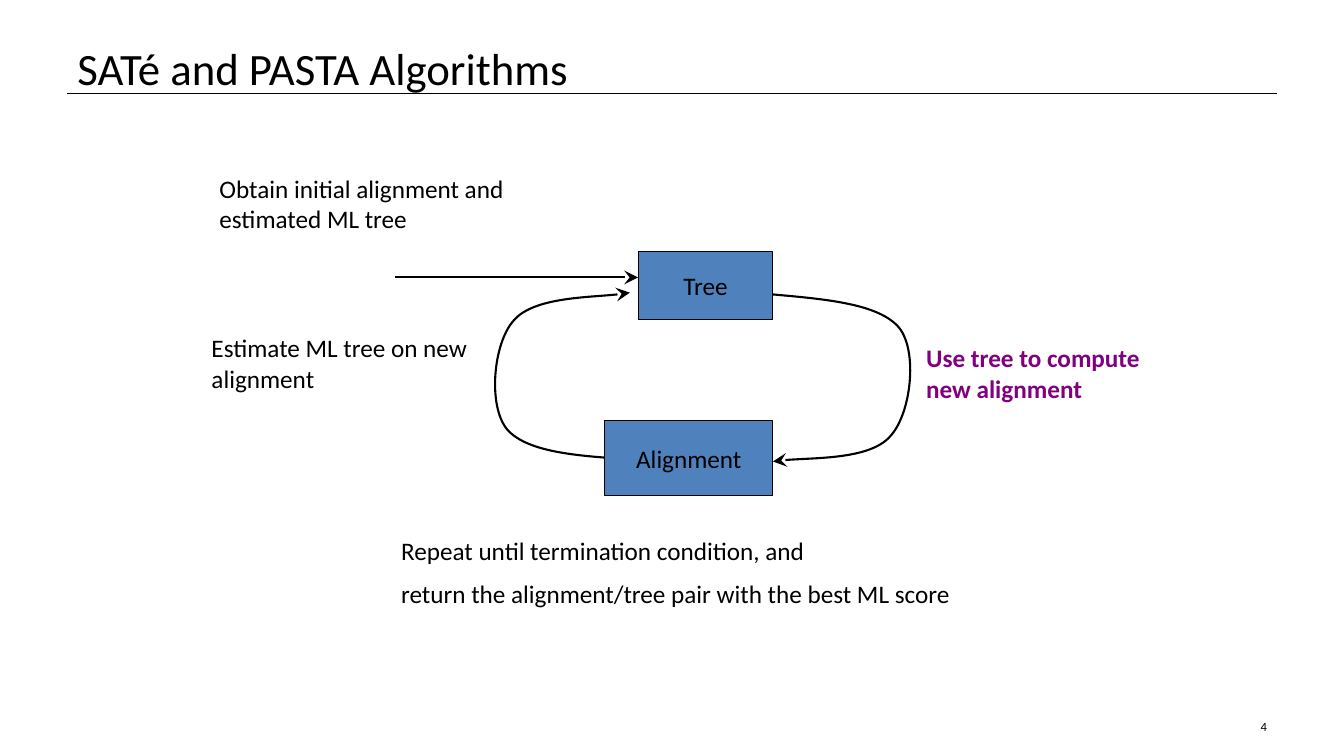
from lxml import etree
from pptx import Presentation
from pptx import util as u
from pptx.dml.color import RGBColor
from pptx.enum import shapes, text
from pptx.oxml.ns import qn

Cm, Pt = u.Cm, u.Pt
BLACK, BLUE, PURPLE = "000000", "4F81BD", "800080"

# Start point, then three points for each cubic curve, in cm
LOOP = [(19.48, 7.42),
        (20.8, 7.54), (22.15, 7.65), (22.66, 8.26),
        (23.14, 8.86), (22.96, 10.44), (22.43, 11),
        (21.92, 11.58), (20.02, 11.53), (19.48, 11.63)]


def rgb(color):
    return RGBColor.from_string(color)


def set_attributes(target, values):
    for name, value in values.items():
        setattr(target, name, value)


def write(frame, lines, size=18, color=BLACK, bold=False, paragraph_format=None, **frame_format):
    set_attributes(frame, frame_format)
    for index, line in enumerate(lines):
        paragraph = frame.add_paragraph() if index else frame.paragraphs[0]
        set_attributes(paragraph, paragraph_format or {})
        run = paragraph.add_run()
        run.text = line
        set_attributes(run.font, {"name": "Calibri", "size": Pt(size), "bold": bold})
        run.font.color.rgb = rgb(color)


def add_label(slide, left, top, width, height, *lines, **options):
    box = slide.shapes.add_textbox(Cm(left), Cm(top), Cm(width), Cm(height))
    write(box.text_frame, lines, word_wrap=True, **options)


def add_box(slide, left, top, width, height, name):
    box = slide.shapes.add_shape(shapes.MSO_SHAPE.RECTANGLE,
                                 Cm(left), Cm(top), Cm(width), Cm(height))
    box.shadow.inherit = False
    box.fill.solid()
    box.fill.fore_color.rgb = rgb(BLUE)
    style_line(box, 0.75)
    write(box.text_frame, [name], word_wrap=False,
          vertical_anchor=text.MSO_ANCHOR.MIDDLE,
          paragraph_format={"alignment": text.PP_ALIGN.CENTER})


def style_line(shape, width, arrow=False):
    shape.line.color.rgb = rgb(BLACK)
    shape.line.width = Pt(width)
    if arrow:
        etree.SubElement(shape.line._get_or_add_ln(), qn("a:tailEnd"),
                         type="stealth", w="lg", len="lg")


def add_line(slide, left, right, height, width, arrow=False):
    line = slide.shapes.add_connector(shapes.MSO_CONNECTOR.STRAIGHT,
                                      Cm(left), Cm(height), Cm(right), Cm(height))
    style_line(line, width, arrow)
    etree.SubElement(line._element.spPr, qn("a:effectLst"))


def add_loop(slide, shift=0, rotation=0):
    """Draw the curved arrow, moved sideways by shift cm and then turned."""
    start, *points = [(Cm(x + shift), Cm(y)) for x, y in LOOP]
    builder = slide.shapes.build_freeform(*start)
    builder.add_line_segments(points, close=False)
    loop = builder.convert_to_shape()
    segments = list(loop._element.iter(qn("a:lnTo")))
    outline = segments[0].getparent()
    for first in range(0, len(segments), 3):
        curve = etree.SubElement(outline, qn("a:cubicBezTo"))
        for segment in segments[first:first + 3]:
            curve.append(segment[0])
            outline.remove(segment)
    loop.rotation = rotation
    loop.shadow.inherit = False
    loop.fill.background()
    style_line(loop, 1.5, arrow=True)


def main():
    presentation = Presentation()
    set_attributes(presentation, {"slide_width": Cm(33.87), "slide_height": Cm(19.05)})
    slide = presentation.slides.add_slide(presentation.slide_layouts[6])

    add_line(slide, 1.7, 32.18, 2.36, 0.75)
    add_label(slide, 1.7, 0.76, 30.48, 1.6, "SATé and PASTA Algorithms", size=32,
              margin_top=Cm(0.13), paragraph_format={"line_spacing": 1.1})

    add_label(slide, 5.28, 4.24, 9.32, 1.8, "Obtain initial alignment and estimated ML tree")
    add_label(slide, 5.08, 8.26, 7.62, 1.8, "Estimate ML tree on new alignment")
    add_label(slide, 23.09, 8.51, 6.78, 1.8, "Use tree to compute new alignment",
              color=PURPLE, bold=True)

    # The left loop starts behind the alignment box, so the boxes come later
    add_loop(slide, shift=-7.21, rotation=178.5)
    add_loop(slide)
    add_box(slide, 16.08, 6.35, 3.4, 1.7, "Tree")
    add_box(slide, 15.24, 10.59, 4.24, 1.9, "Alignment")
    add_line(slide, 9.96, 16.08, 6.99, 1.5, arrow=True)

    add_label(slide, 9.86, 13.36, 14.76, 2.18,
              "Repeat until termination condition, and",
              "return the alignment/tree pair with the best ML score",
              paragraph_format={"space_after": Pt(9)})
    add_label(slide, 24.28, 17.98, 7.9, 0.69, "4", size=9,
              paragraph_format={"alignment": text.PP_ALIGN.RIGHT})

    presentation.save("out.pptx")


if __name__ == "__main__":
    main()
